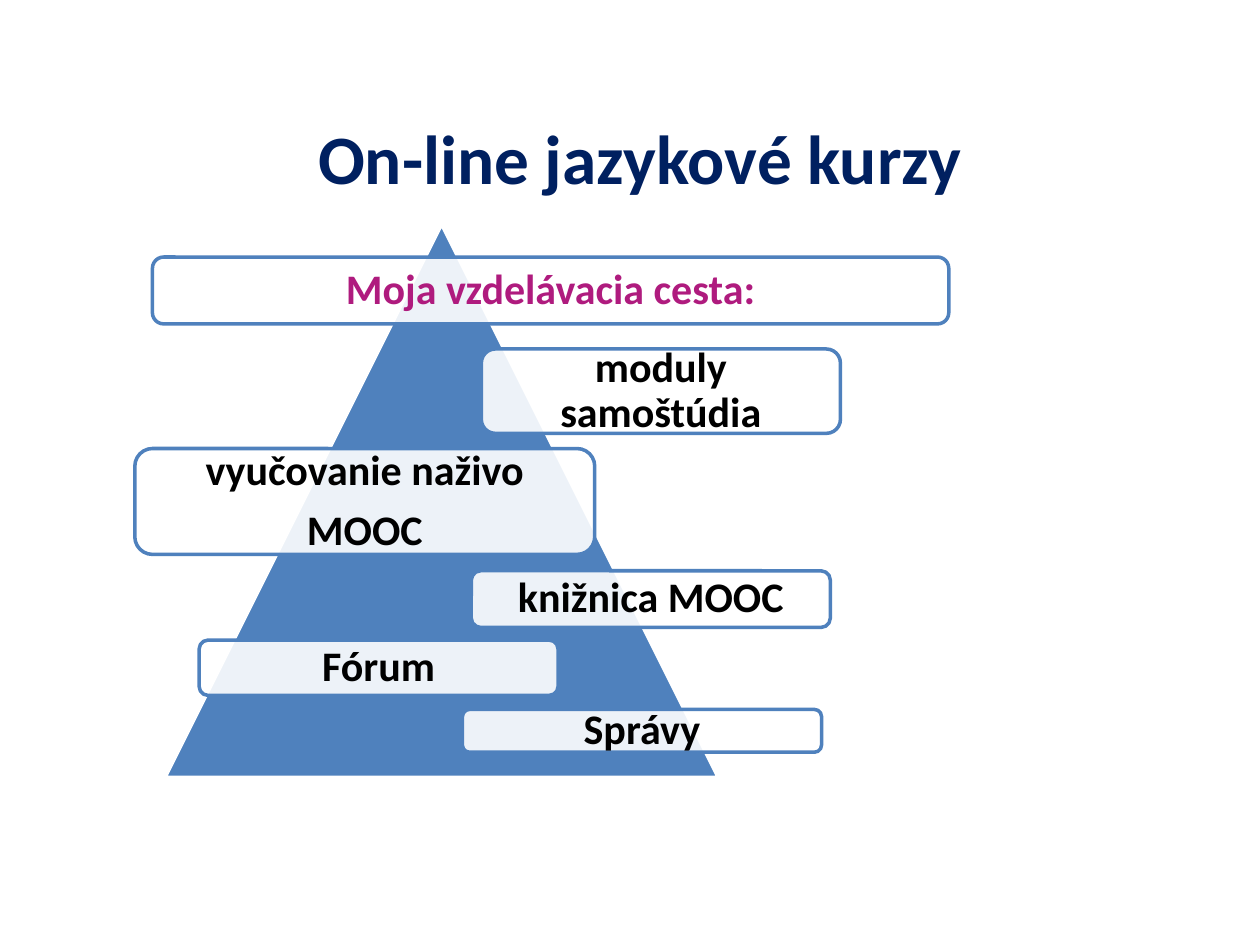
import dataclasses

import pptx
import pptx.dml.color
import pptx.enum.shapes
import pptx.enum.text
import pptx.oxml
import pptx.oxml.ns
import pptx.util

SHAPES = pptx.enum.shapes.MSO_SHAPE


@dataclasses.dataclass(frozen=True)
class Theme:
    font: str = "Calibri"
    title_size: float = 39.6
    step_size: float = 24
    line_width: float = 2
    navy: str = "002060"
    blue: str = "4F81BD"
    magenta: str = "AF1B7E"
    black: str = "000000"
    white: str = "FFFFFF"
    step_opacity: int = 90


THEME = Theme()
SLIDE_WIDTH = pptx.util.Inches(10)
SLIDE_HEIGHT = pptx.util.Inches(7.5)

# Left, top, width and height in percent of the slide
TITLE_AREA = (8.3, 5.87, 85, 21.47)
PYRAMID_AREA = (13.1, 23.73, 43.9, 58.53)
STEPS = [
    ((12.1, 27.2, 63.2, 7.07), ["Moja vzdelávacia cesta:"], THEME.magenta),
    ((38.2, 36.93, 28.5, 8.93), ["moduly samoštúdia"], THEME.black),
    ((10.7, 47.47, 36.5, 11.2), ["vyučovanie naživo", "MOOC"], THEME.black),
    ((37.4, 60.4, 28.5, 6), ["knižnica MOOC"], THEME.black),
    ((15.8, 67.73, 28.5, 5.87), ["Fórum"], THEME.black),
    ((36.7, 75.07, 28.5, 4.53), ["Správy"], THEME.black),
]


def rgb(color):
    return pptx.dml.color.RGBColor.from_string(color)


def place(area):
    left, top, width, height = (share / 100 for share in area)
    return (int(left * SLIDE_WIDTH), int(top * SLIDE_HEIGHT),
            int(width * SLIDE_WIDTH), int(height * SLIDE_HEIGHT))


def apply(target, formats):
    for name, value in formats.items():
        setattr(target, name, value)


def write(frame, lines, size, color, **spacing):
    inset = pptx.util.Inches(0.1)
    apply(frame, {
        "word_wrap": True,
        "vertical_anchor": pptx.enum.text.MSO_ANCHOR.MIDDLE,
        "margin_left": inset, "margin_right": inset,
        "margin_top": inset, "margin_bottom": inset,
    })
    for index, line in enumerate(lines):
        paragraph = frame.add_paragraph() if index else frame.paragraphs[0]
        apply(paragraph, {"alignment": pptx.enum.text.PP_ALIGN.CENTER, **spacing})
        run = paragraph.add_run()
        run.text = line
        apply(run.font, {"name": THEME.font, "size": pptx.util.Pt(size), "bold": True})
        run.font.color.rgb = rgb(color)


def add_title(slide, title):
    box = slide.shapes.add_textbox(*place(TITLE_AREA))
    write(box.text_frame, [title], THEME.title_size, THEME.navy)


def add_outlined(slide, preset, area, fill, line):
    shape = slide.shapes.add_shape(preset, *place(area))
    shape.shadow.inherit = False
    shape.fill.solid()
    shape.fill.fore_color.rgb = rgb(fill)
    shape.line.color.rgb = rgb(line)
    shape.line.width = pptx.util.Pt(THEME.line_width)
    return shape


def add_step(slide, area, lines, color):
    step = add_outlined(slide, SHAPES.ROUNDED_RECTANGLE, area, THEME.white, THEME.blue)
    # The pyramid shows faintly through each step
    fill_color = step.fill._xPr.find(pptx.oxml.ns.qn("a:solidFill"))[0]
    alpha = pptx.oxml.parse_xml(
        f'<a:alpha {pptx.oxml.ns.nsdecls("a")} val="{THEME.step_opacity * 1000}"/>')
    fill_color.append(alpha)
    write(step.text_frame, lines, THEME.step_size, color,
          line_spacing=0.9, space_after=pptx.util.Pt(0.35 * THEME.step_size))


def main():
    presentation = pptx.Presentation()
    apply(presentation, {"slide_width": SLIDE_WIDTH, "slide_height": SLIDE_HEIGHT})
    slide = presentation.slides.add_slide(presentation.slide_layouts[6])

    # Heading
    add_title(slide, "On-line jazykové kurzy")

    # Pyramid with the steps of the learning path
    add_outlined(slide, SHAPES.ISOSCELES_TRIANGLE, PYRAMID_AREA, THEME.blue, THEME.white)
    for area, lines, color in STEPS:
        add_step(slide, area, lines, color)

    presentation.save("out.pptx")


if __name__ == "__main__":
    main()
